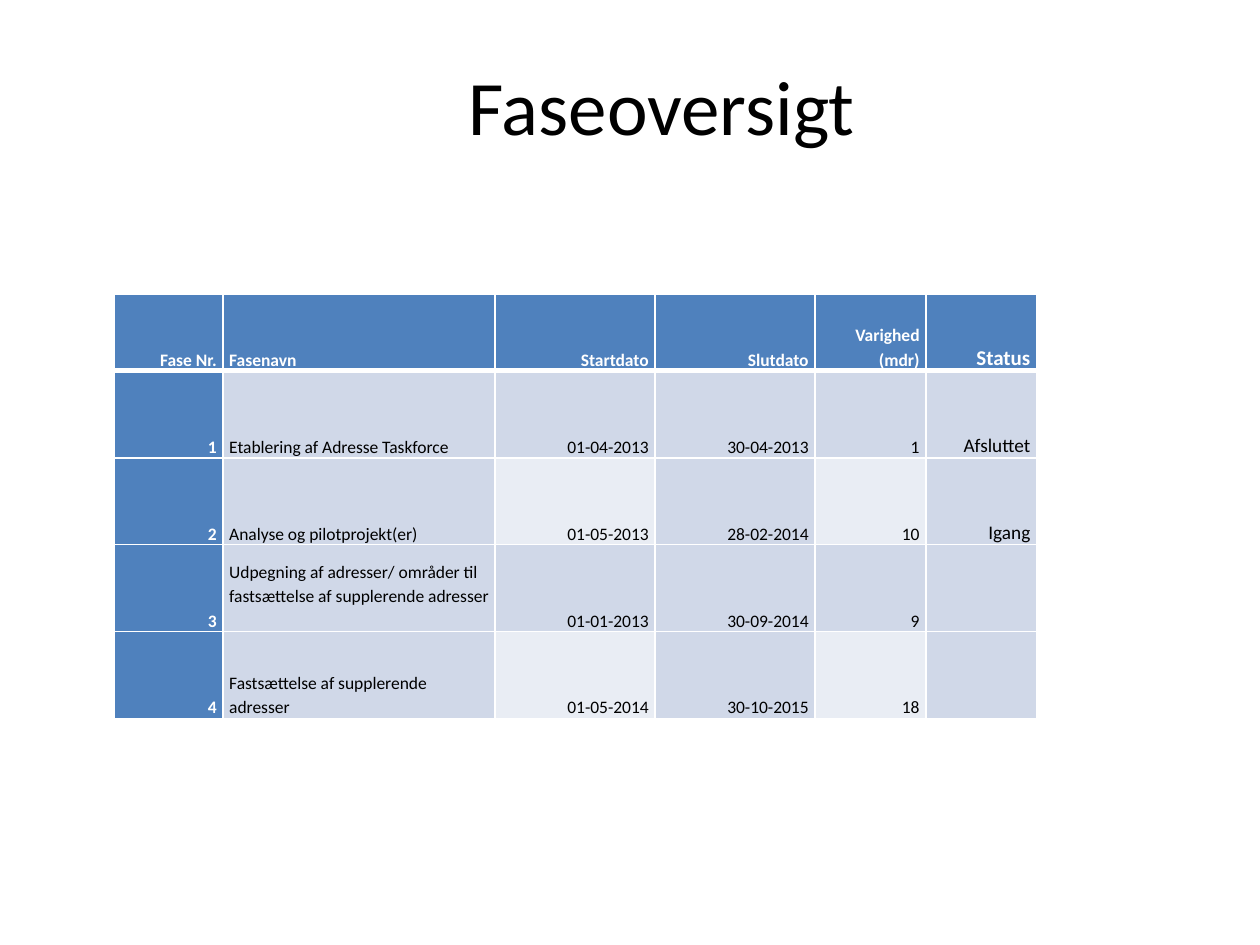
from lxml import etree
from pptx import Presentation
from pptx.dml.color import RGBColor
from pptx.enum.text import MSO_ANCHOR, PP_ALIGN
from pptx.oxml import parse_xml
from pptx.oxml.ns import nsdecls
from pptx.util import Pt

FONT = "Calibri"
WHITE, BLACK = "FFFFFF", "000000"
BLUE, BAND, PALE = "4F81BD", "D0D8E8", "E9EDF4"

COLUMN_WIDTHS = [61.9, 155.5, 91.4, 91.4, 63.4, 63.4]
ROW_HEIGHTS = [43.9] + [49.7] * 4
NAME_COLUMN, STATUS_COLUMN = 1, 5
PALE_COLUMNS = (2, 4)
LINE_SPACING = 14

PHASES = [
    ["Fase Nr.", "Fasenavn", "Startdato", "Slutdato", "Varighed (mdr)", "Status"],
    ["1", "Etablering af Adresse Taskforce", "01-04-2013", "30-04-2013", "1", "Afsluttet"],
    ["2", "Analyse og pilotprojekt(er)", "01-05-2013", "28-02-2014", "10", "Igang"],
    ["3", "Udpegning af adresser/ områder til fastsættelse af supplerende adresser",
     "01-01-2013", "30-09-2014", "9", ""],
    ["4", "Fastsættelse af supplerende adresser", "01-05-2014", "30-10-2015", "18", ""],
]
RAISED_CELL = (3, NAME_COLUMN)


def color(hex_value):
    return RGBColor.from_string(hex_value)


def style_font(font, size, hex_value, bold=False):
    font.name, font.size, font.bold = FONT, Pt(size), bold
    font.color.rgb = color(hex_value)


def add_title(slide, left, top, width, height):
    frame = slide.shapes.add_textbox(Pt(left), Pt(top), Pt(width), Pt(height)).text_frame
    frame.word_wrap = True
    frame.vertical_anchor = MSO_ANCHOR.MIDDLE
    frame.text = "Faseoversigt"
    title = frame.paragraphs[0]
    title.alignment = PP_ALIGN.CENTER
    style_font(title.runs[0].font, 44, BLACK)


def add_borders(cell, row):
    """Draw white cell borders, with a thick rule between header and body."""
    widths = {"L": 1, "R": 1, "T": 3 if row == 1 else 1, "B": 3 if row == 0 else 1}
    properties = cell._tc.get_or_add_tcPr()
    for side, width in widths.items():
        border = parse_xml(f'<a:ln{side} {nsdecls("a")} w="{Pt(width)}"/>')
        fill = etree.SubElement(border, border.tag.replace(f"ln{side}", "solidFill"))
        etree.SubElement(fill, fill.tag.replace("solidFill", "srgbClr"), val=WHITE)
        properties.append(border)


def cell_fill(row, column):
    if row == 0 or column == 0:
        return BLUE
    return PALE if row % 2 == 0 and column in PALE_COLUMNS else BAND


def fill_cell(cell, row, column, text):
    add_borders(cell, row)
    cell.fill.solid()
    cell.fill.fore_color.rgb = color(cell_fill(row, column))
    cell.vertical_anchor = MSO_ANCHOR.BOTTOM
    cell.margin_left = cell.margin_right = Pt(3.6)
    cell.margin_top = 0
    cell.margin_bottom = Pt(LINE_SPACING if (row, column) == RAISED_CELL else 0)

    cell.text_frame.text = text
    paragraph = cell.text_frame.paragraphs[0]
    paragraph.alignment = PP_ALIGN.LEFT if column == NAME_COLUMN else PP_ALIGN.RIGHT
    paragraph.line_spacing = Pt(LINE_SPACING)
    heading = row == 0 or column == 0
    size = 10
    if column == STATUS_COLUMN:
        size = 12 if row == 0 else 11
    for run in paragraph.runs:
        style_font(run.font, size, WHITE if heading else BLACK, heading)


def add_phase_table(slide, left, top):
    table = slide.shapes.add_table(
        len(PHASES), len(COLUMN_WIDTHS), Pt(left), Pt(top),
        Pt(sum(COLUMN_WIDTHS)), Pt(sum(ROW_HEIGHTS))).table
    table.first_col = True
    for column, width in zip(table.columns, COLUMN_WIDTHS):
        column.width = Pt(width)
    for row, height in zip(table.rows, ROW_HEIGHTS):
        row.height = Pt(height)
    for row, phase in enumerate(PHASES):
        for column, text in enumerate(phase):
            fill_cell(table.cell(row, column), row, column, text)


def main():
    presentation = Presentation()
    presentation.slide_width, presentation.slide_height = Pt(720), Pt(540)
    slide = presentation.slides.add_slide(presentation.slide_layouts[6])
    add_title(slide, 54, 15, 648, 90)
    add_phase_table(slide, 65.5, 168)
    presentation.save("out.pptx")


if __name__ == "__main__":
    main()
